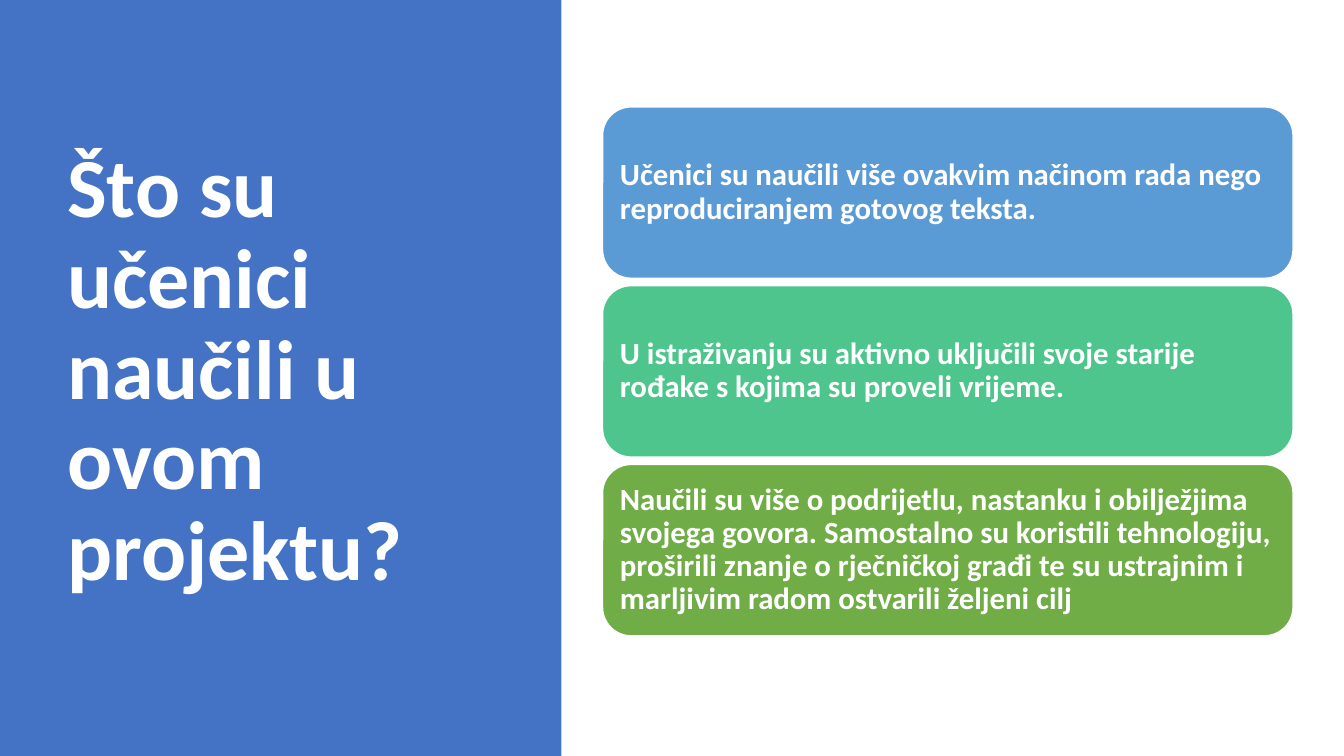
from dataclasses import dataclass

from pptx import Presentation
from pptx.dml.color import RGBColor
from pptx.enum import shapes, text
from pptx.shapes.autoshape import Shape
from pptx.slide import Slide
from pptx.text.text import TextFrame
from pptx.util import Pt

WHITE = RGBColor(0xFF, 0xFF, 0xFF)
PANEL_BLUE = RGBColor(0x44, 0x72, 0xC4)
SKY_BLUE = RGBColor(0x5B, 0x9B, 0xD5)
MINT = RGBColor(0x4D, 0xC5, 0x8D)
GREEN = RGBColor(0x70, 0xAD, 0x47)

FONT = "Calibri"
PAGE_WIDTH, PAGE_HEIGHT = 960, 540
PANEL_WIDTH = 401
CARD_LEFT, CARD_TOP = 430.4, 76.4
CARD_WIDTH, CARD_HEIGHT = 493.2, 122.4
CARD_PITCH = 127.7


@dataclass(frozen=True)
class Card:
    wording: str
    color: RGBColor


CARDS = [
    Card("Učenici su naučili više ovakvim načinom rada nego "
         "reproduciranjem gotovog teksta.", SKY_BLUE),
    Card("U istraživanju su aktivno uključili svoje starije "
         "rođake s kojima su proveli vrijeme.", MINT),
    Card("Naučili su više o podrijetlu, nastanku i obilježjima "
         "svojega govora. Samostalno su koristili tehnologiju, "
         "proširili znanje o rječničkoj građi te su ustrajnim i "
         "marljivim radom ostvarili željeni cilj", GREEN),
]


def write_text(frame: TextFrame, wording: str, *, size: float,
               inset_x: float, inset_y: float) -> None:
    frame.word_wrap = True
    frame.vertical_anchor = text.MSO_ANCHOR.MIDDLE
    frame.margin_left = frame.margin_right = Pt(inset_x)
    frame.margin_top = frame.margin_bottom = Pt(inset_y)
    para = frame.paragraphs[0]
    para.alignment = text.PP_ALIGN.LEFT
    para.line_spacing = 0.9
    span = para.add_run()
    span.text = wording
    span.font.name = FONT
    span.font.size = Pt(size)
    span.font.bold = True
    span.font.color.rgb = WHITE


def add_filled(page: Slide, kind: shapes.MSO_SHAPE, left: float, top: float,
               width: float, height: float, color: RGBColor) -> Shape:
    box = page.shapes.add_shape(kind, Pt(left), Pt(top), Pt(width), Pt(height))
    box.shadow.inherit = False
    box.fill.solid()
    box.fill.fore_color.rgb = color
    box.line.fill.background()
    return box


def add_title(page: Slide) -> None:
    box = page.shapes.add_textbox(Pt(41), Pt(49), Pt(299.5), Pt(433.4))
    write_text(box.text_frame, "Što su učenici naučili u ovom projektu?",
               size=60, inset_x=7.2, inset_y=3.6)


def add_card(page: Slide, card: Card, top: float) -> None:
    box = add_filled(page, shapes.MSO_SHAPE.ROUNDED_RECTANGLE, CARD_LEFT, top,
                     CARD_WIDTH, CARD_HEIGHT, card.color)
    box.line.color.rgb = WHITE
    box.line.width = Pt(1)
    write_text(box.text_frame, card.wording, size=22, inset_x=6.5, inset_y=6.5)


def main() -> None:
    deck = Presentation()
    deck.slide_width, deck.slide_height = Pt(PAGE_WIDTH), Pt(PAGE_HEIGHT)
    page = deck.slides.add_slide(deck.slide_layouts[6])
    add_filled(page, shapes.MSO_SHAPE.RECTANGLE, 0, 0, PANEL_WIDTH, PAGE_HEIGHT,
               PANEL_BLUE)
    add_title(page)
    for index, card in enumerate(CARDS):
        add_card(page, card, CARD_TOP + index * CARD_PITCH)
    deck.save("out.pptx")


if __name__ == "__main__":
    main()
